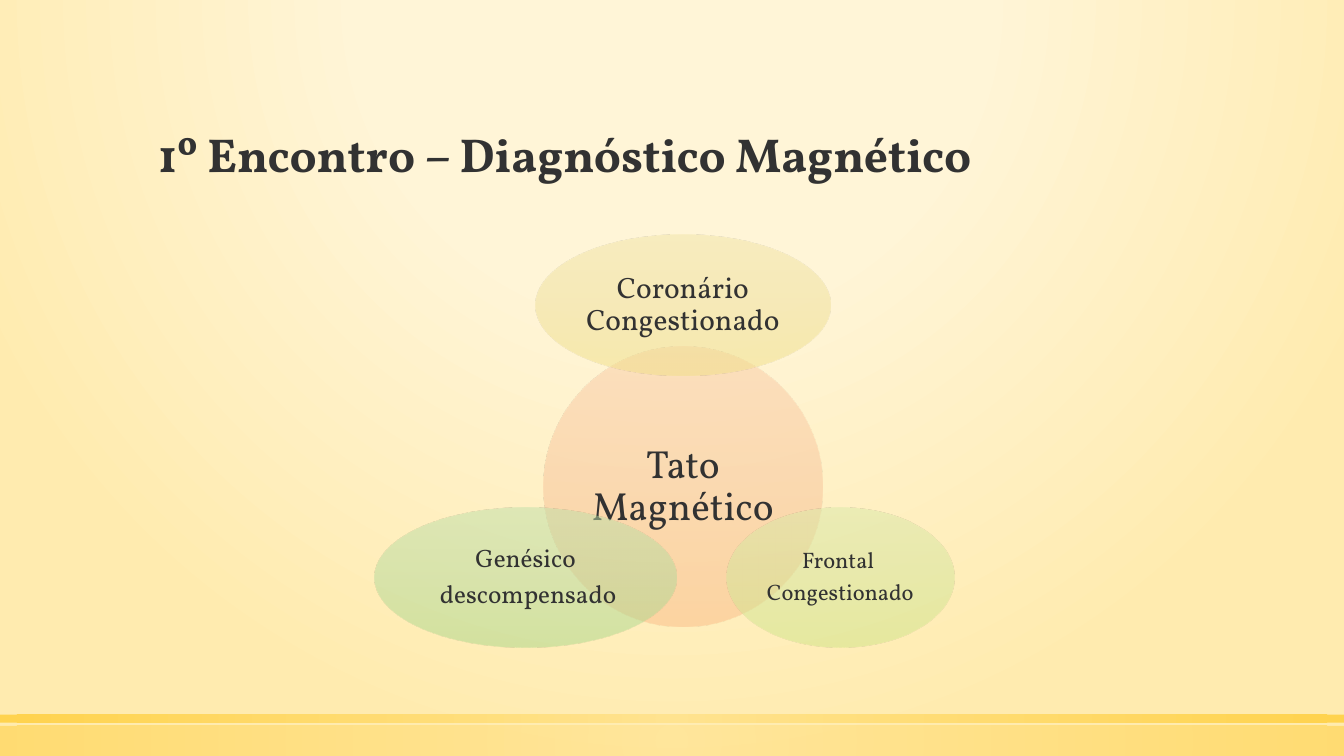
from dataclasses import dataclass

import pptx
import pptx.dml.color
import pptx.enum.shapes
import pptx.enum.text
import pptx.oxml.ns
import pptx.util
from lxml import etree

Cm = pptx.util.Cm
Pt = pptx.util.Pt
RGBColor = pptx.dml.color.RGBColor
SHAPE = pptx.enum.shapes.MSO_SHAPE
ANCHOR = pptx.enum.text.MSO_ANCHOR
ALIGN = pptx.enum.text.PP_ALIGN
qn = pptx.oxml.ns.qn

FONT = "Vollkorn"
INK = RGBColor(0x32, 0x32, 0x32)
CREAM = RGBColor(0xFF, 0xF5, 0xD7)
SAND = RGBColor(0xFF, 0xEB, 0xAF)
PALE_GOLD = RGBColor(0xFF, 0xE1, 0x86)
GOLD = RGBColor(0xFF, 0xCD, 0x36)
ORANGES = (RGBColor(0xFA, 0xCD, 0xA9), RGBColor(0xF8, 0xC3, 0x9A), RGBColor(0xFB, 0xBB, 0x87))
YELLOWS = (RGBColor(0xF2, 0xE5, 0xA8), RGBColor(0xEF, 0xE0, 0x9A), RGBColor(0xF1, 0xDF, 0x87))
LIMES = (RGBColor(0xDA, 0xE9, 0xA8), RGBColor(0xD3, 0xE5, 0x9A), RGBColor(0xCF, 0xE5, 0x87))
GREENS = (RGBColor(0xBF, 0xE0, 0xA9), RGBColor(0xB4, 0xDA, 0x9B), RGBColor(0xA9, 0xD8, 0x89))

SLIDE_WIDTH, SLIDE_HEIGHT = 33.87, 19.05


@dataclass
class Stop:
    position: int
    color: RGBColor
    opacity: int = 100


@dataclass
class Bar:
    top: float
    height: float
    opacity: int


@dataclass
class Bubble:
    lines: tuple[str, ...]
    left: float
    top: float
    width: float
    height: float
    size: int
    inset: float
    colors: tuple[RGBColor, ...]


BARS = [Bar(18.29, 0.76, 50), Bar(18.01, 0.2, 80)]

BUBBLES = [
    Bubble(("Tato Magnético",), 13.69, 8.74, 7.04, 7.04, 28, 0.1, ORANGES),
    Bubble(("Coronário Congestionado",), 13.49, 5.92, 7.44, 3.53, 21, 0.08, YELLOWS),
    Bubble(("Frontal ", "Congestionado"), 18.31, 12.78, 5.74, 3.53, 16, 0.05, LIMES),
    Bubble(("Genésico", " descompensado"), 9.45, 12.78, 7.59, 3.53, 18, 0.08, GREENS),
]


def set_gradient(owner, element, stops: list[Stop], focus: tuple[int, ...] | None = None) -> None:
    """Fill with a circular gradient around focus, or top to bottom without one."""
    owner.fill.gradient()
    gradient = element.find(".//" + qn("a:gradFill"))
    for child in list(gradient):
        gradient.remove(child)
    stop_list = etree.SubElement(gradient, qn("a:gsLst"))
    for stop in stops:
        mark = etree.SubElement(stop_list, qn("a:gs"), pos=str(stop.position * 1000))
        color = etree.SubElement(mark, qn("a:srgbClr"), val=str(stop.color))
        if stop.opacity < 100:
            etree.SubElement(color, qn("a:alpha"), val=str(stop.opacity * 1000))
    if focus is None:
        etree.SubElement(gradient, qn("a:lin"), ang="5400000", scaled="0")
        return
    circle = etree.SubElement(gradient, qn("a:path"), path="circle")
    edges = {side: str(value * 1000) for side, value in zip("ltrb", focus)}
    etree.SubElement(circle, qn("a:fillToRect"), **edges)


def add_plain_shape(page, kind, left: float, top: float, width: float, height: float):
    shape = page.shapes.add_shape(kind, Cm(left), Cm(top), Cm(width), Cm(height))
    shape.shadow.inherit = False
    shape.line.fill.background()
    return shape


def add_text(para, text: str, size: int, bold: bool = False) -> None:
    para.line_spacing = 0.9
    span = para.add_run()
    span.text = text
    span.font.name = FONT
    span.font.size = Pt(size)
    span.font.bold = bold
    span.font.color.rgb = INK


def add_bar(page, bar: Bar) -> None:
    shape = add_plain_shape(page, SHAPE.RECTANGLE, 0, bar.top, SLIDE_WIDTH, bar.height)
    stops = [Stop(0, PALE_GOLD, bar.opacity), Stop(100, GOLD, bar.opacity)]
    set_gradient(shape, shape._element, stops, (50, 50, 50, 50))


def add_title(page, text: str) -> None:
    title = page.shapes.title
    title.left, title.top, title.width, title.height = Cm(3.73), Cm(1.3), Cm(26.42), Cm(3.43)
    frame = title.text_frame
    frame.word_wrap = True
    frame.auto_size = pptx.enum.text.MSO_AUTO_SIZE.NONE
    frame.vertical_anchor = ANCHOR.BOTTOM
    para = frame.paragraphs[0]
    para.alignment = ALIGN.LEFT
    add_text(para, text, 34, bold=True)


def add_bubble(page, bubble: Bubble) -> None:
    shape = add_plain_shape(page, SHAPE.OVAL, bubble.left, bubble.top, bubble.width, bubble.height)
    stops = [Stop(50 * step, color, 50) for step, color in enumerate(bubble.colors)]
    set_gradient(shape, shape._element, stops)
    frame = shape.text_frame
    frame.word_wrap = True
    frame.vertical_anchor = ANCHOR.MIDDLE
    frame.margin_left = frame.margin_right = Cm(bubble.inset)
    frame.margin_top = frame.margin_bottom = Cm(bubble.inset)
    for index, line in enumerate(bubble.lines):
        para = frame.add_paragraph() if index else frame.paragraphs[0]
        para.alignment = ALIGN.CENTER
        para.space_after = Pt(0.35 * bubble.size)
        add_text(para, line, bubble.size)


def main() -> None:
    deck = pptx.Presentation()
    deck.slide_width, deck.slide_height = Cm(SLIDE_WIDTH), Cm(SLIDE_HEIGHT)
    page = deck.slides.add_slide(deck.slide_layouts.get_by_name("Title Only"))

    # Backdrop and bottom bars
    backdrop = [Stop(0, CREAM, 59), Stop(40, CREAM, 66), Stop(100, SAND)]
    set_gradient(page.background, page._element, backdrop, (50, -80, 50, 180))
    for bar in BARS:
        add_bar(page, bar)

    # Title
    add_title(page, "1º Encontro – Diagnóstico Magnético")

    # Diagram, the core circle first
    for bubble in BUBBLES:
        add_bubble(page, bubble)

    deck.save("out.pptx")


if __name__ == "__main__":
    main()
